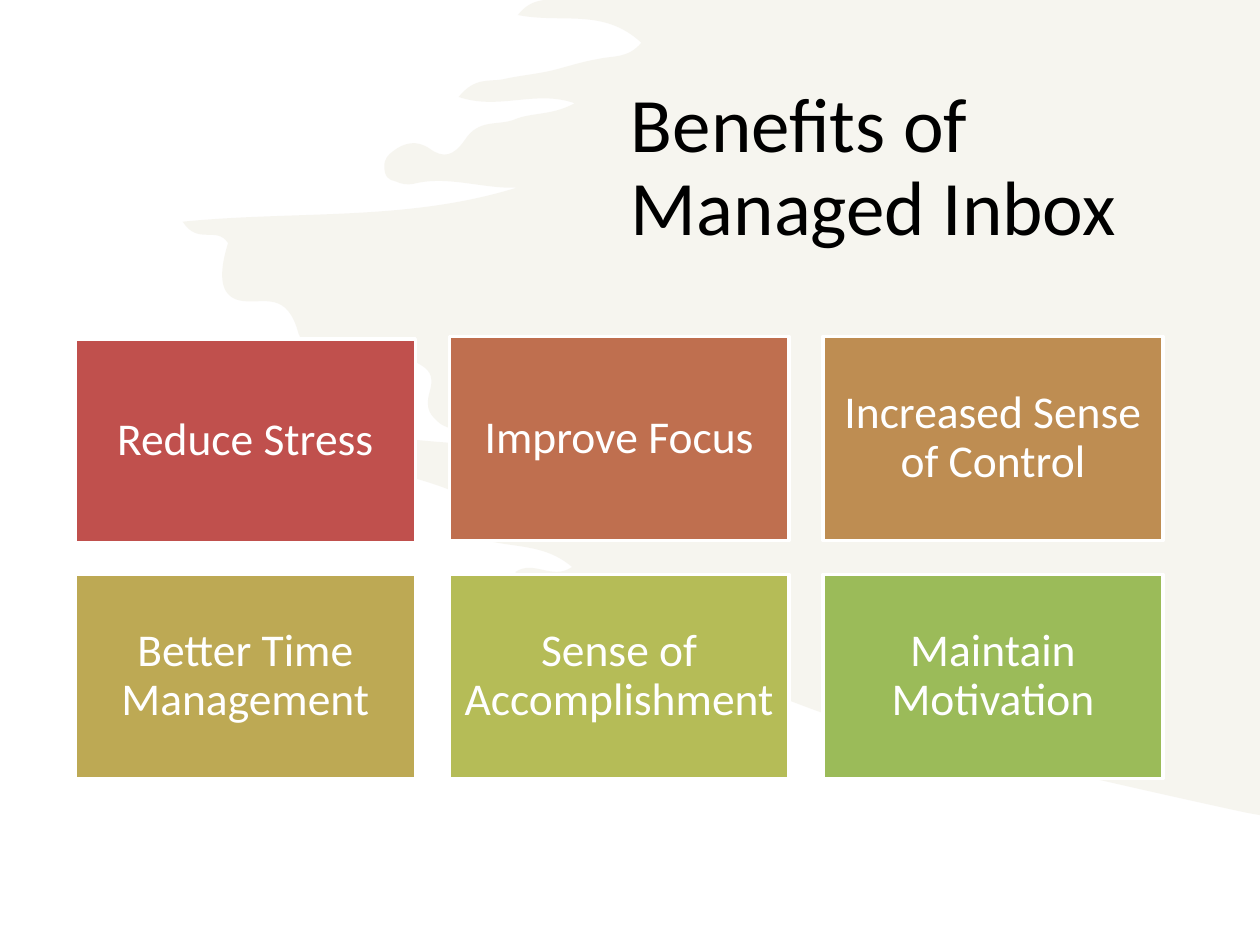
import pptx
import pptx.dml.color
import pptx.enum.shapes
import pptx.enum.text
import pptx.oxml
import pptx.oxml.ns
import pptx.util
from pptx.util import Inches

RGBColor = pptx.dml.color.RGBColor
qn = pptx.oxml.ns.qn
WHITE = RGBColor(0xFF, 0xFF, 0xFF)
BLACK = RGBColor(0x00, 0x00, 0x00)
CREAM = RGBColor(0xEE, 0xEC, 0xE1)
RED = RGBColor(0xC0, 0x50, 0x4D)
RUST = RGBColor(0xBF, 0x6F, 0x4F)
OCHRE = RGBColor(0xBE, 0x8D, 0x52)
MUSTARD = RGBColor(0xBD, 0xA9, 0x54)
LIME = RGBColor(0xB5, 0xBC, 0x57)
GREEN = RGBColor(0x9B, 0xBB, 0x59)

# Text, fill and vertical offset of each tile
BENEFITS = [
    ("Reduce Stress", RED, 0.02),
    ("Improve Focus", RUST, 0),
    ("Increased Sense of Control", OCHRE, 0),
    ("Better Time Management", MUSTARD, 0),
    ("Sense of Accomplishment", LIME, 0),
    ("Maintain Motivation", GREEN, 0),
]

# Ragged edge of the brush stroke, from the left and top of its box:
# two control points and an end point per curve
EDGE_START = (2.87, 0)
EDGE_CURVES = [
    ((2.8, 0.01), (2.73, 0.03), (2.66, 0.12)),
    ((3.01, 0.19), (3.34, 0.06), (3.64, 0.34)),
    ((3.53, 0.47), (3.41, 0.44), (3.29, 0.47)),
    ((3.17, 0.49), (3.05, 0.53), (2.93, 0.56)),
    ((2.8, 0.59), (2.67, 0.6), (2.54, 0.63)),
    ((2.43, 0.65), (2.32, 0.61), (2.19, 0.77)),
    ((2.51, 0.88), (2.8, 0.71), (3.11, 0.82)),
    ((2.93, 0.92), (2.77, 0.89), (2.63, 0.95)),
    ((2.5, 1), (2.35, 0.94), (2.24, 1.11)),
    ((2.15, 1.24), (2.07, 1.26), (1.96, 1.18)),
    ((1.86, 1.11), (1.76, 1.13), (1.67, 1.2)),
    ((1.63, 1.23), (1.6, 1.26), (1.6, 1.32)),
    ((1.6, 1.41), (1.64, 1.43), (1.69, 1.44)),
    ((1.73, 1.46), (1.78, 1.47), (1.83, 1.46)),
    ((2.1, 1.39), (2.38, 1.5), (2.65, 1.49)),
    ((1.78, 1.76), (0.9, 1.67), (0, 1.76)),
    ((0.12, 1.95), (0.27, 1.79), (0.36, 1.93)),
    ((0.27, 2.22), (0.31, 2.37), (0.48, 2.39)),
    ((0.65, 2.41), (0.83, 2.31), (0.92, 2.65)),
    ((0.95, 2.76), (1.11, 2.73), (1.21, 2.75)),
    ((1.43, 2.79), (1.66, 2.75), (1.86, 2.88)),
    ((1.95, 2.93), (2, 2.97), (1.96, 3.11)),
    ((1.92, 3.25), (1.97, 3.3), (2.04, 3.36)),
    ((2.09, 3.4), (2.17, 3.39), (2.22, 3.52)),
    ((1.76, 3.5), (1.32, 3.4), (0.87, 3.5)),
    ((1.36, 3.74), (1.9, 3.73), (2.39, 4.02)),
    ((2.37, 4.12), (2.26, 4.07), (2.25, 4.22)),
    ((2.51, 4.38), (2.82, 4.27), (3.09, 4.5)),
    ((2.93, 4.61), (2.79, 4.44), (2.64, 4.54)),
    ((2.69, 4.69), (4.85, 5.61), (5.24, 5.71)),
    ((5.88, 5.87), (7.51, 6.25), (8.44, 6.45)),
]


def write_text(shape, text, *, size, color, align, margins):
    """Fill a shape with one middle-anchored paragraph."""
    frame = shape.text_frame
    frame.word_wrap = True
    frame.vertical_anchor = pptx.enum.text.MSO_ANCHOR.MIDDLE
    frame.margin_left, frame.margin_top, frame.margin_right, frame.margin_bottom = (
        Inches(margin) for margin in margins)
    para = frame.paragraphs[0]
    para.alignment = align
    para.line_spacing = 0.9
    span = para.add_run()
    span.text = text
    span.font.name = "Calibri"
    span.font.size = pptx.util.Pt(size)
    span.font.color.rgb = color


def bend_lines(lines):
    """Turn each three successive line segments into one cubic Bézier segment."""
    for first, second, third in zip(lines[::3], lines[1::3], lines[2::3]):
        first.tag = qn("a:cubicBezTo")
        for line in (second, third):
            first.append(line[0])
            line.getparent().remove(line)


def add_brush_stroke(page, left, top, width, height):
    """Draw the half-transparent stroke, flush with the right side of its box."""
    outline = [EDGE_START]
    for curve in EDGE_CURVES:
        outline += curve
    outline.append((width, height))
    builder = page.shapes.build_freeform(Inches(width), 0)
    builder.add_line_segments([(Inches(x), Inches(y)) for x, y in outline], close=True)
    stroke = builder.convert_to_shape(Inches(left), Inches(top))
    # The first and last segments stay straight
    bend_lines(list(stroke._element.iter(qn("a:lnTo")))[1:-1])
    stroke.shadow.inherit = False
    stroke.line.fill.background()
    stroke.fill.solid()
    stroke.fill.fore_color.rgb = CREAM
    # Half transparency
    color = stroke._element.spPr.find(".//" + qn("a:srgbClr"))
    color.append(pptx.oxml.parse_xml(
        f'<a:alpha {pptx.oxml.ns.nsdecls("a")} val="50000"/>'))


def add_title(page, left, top, width, height):
    """Place the slide title."""
    box = page.shapes.add_textbox(*map(Inches, (left, top, width, height)))
    write_text(box, "Benefits of Managed Inbox", size=44, color=BLACK,
               align=pptx.enum.text.PP_ALIGN.LEFT, margins=(0.1, 0.05, 0.1, 0.05))


def add_benefit_grid(page, left, top, width, height, columns=3, gap=0.27):
    """Place the benefit tiles in equal rows and columns."""
    rows = len(BENEFITS) // columns
    tile_width = (width - gap * (columns - 1)) / columns
    tile_height = (height - gap * (rows - 1)) / rows
    for index, (text, color, drop) in enumerate(BENEFITS):
        row, column = divmod(index, columns)
        tile = page.shapes.add_shape(
            pptx.enum.shapes.MSO_SHAPE.RECTANGLE,
            Inches(left + column * (tile_width + gap)),
            Inches(top + row * (tile_height + gap) + drop),
            Inches(tile_width), Inches(tile_height))
        tile.shadow.inherit = False
        tile.fill.solid()
        tile.fill.fore_color.rgb = color
        tile.line.color.rgb = WHITE
        tile.line.width = pptx.util.Pt(2)
        write_text(tile, text, size=26, color=WHITE,
                   align=pptx.enum.text.PP_ALIGN.CENTER, margins=(0.11,) * 4)


def main():
    deck = pptx.Presentation()
    deck.slide_width, deck.slide_height = Inches(10), Inches(7.5)
    page = deck.slides.add_slide(deck.slide_layouts[6])
    page.background.fill.solid()
    page.background.fill.fore_color.rgb = WHITE
    add_brush_stroke(page, 1.45, 0, 8.55, 6.47)
    add_title(page, 4.91, 0.31, 4.4, 2.07)
    add_benefit_grid(page, 0.6, 2.67, 8.63, 3.51)
    deck.save("out.pptx")


if __name__ == "__main__":
    main()
